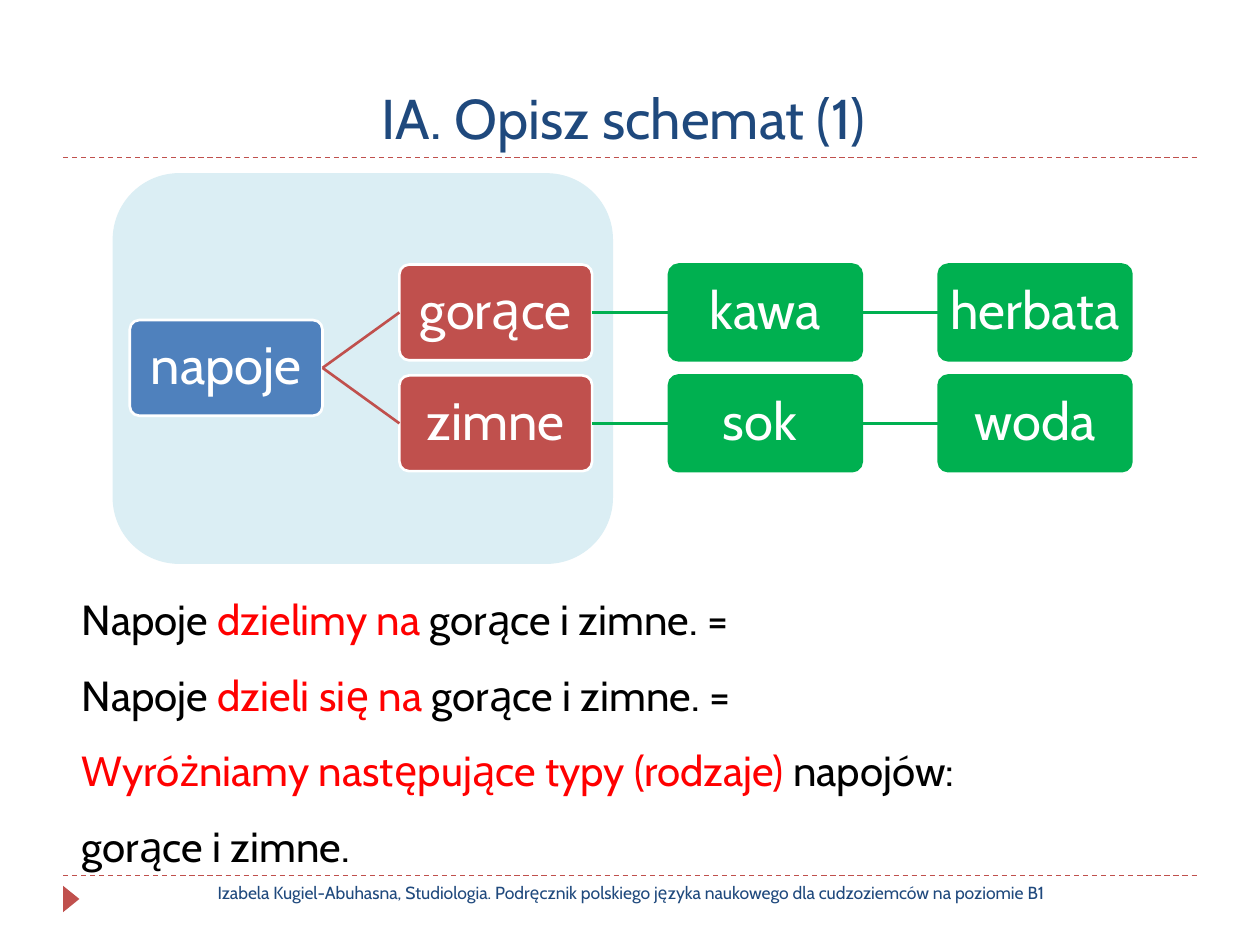
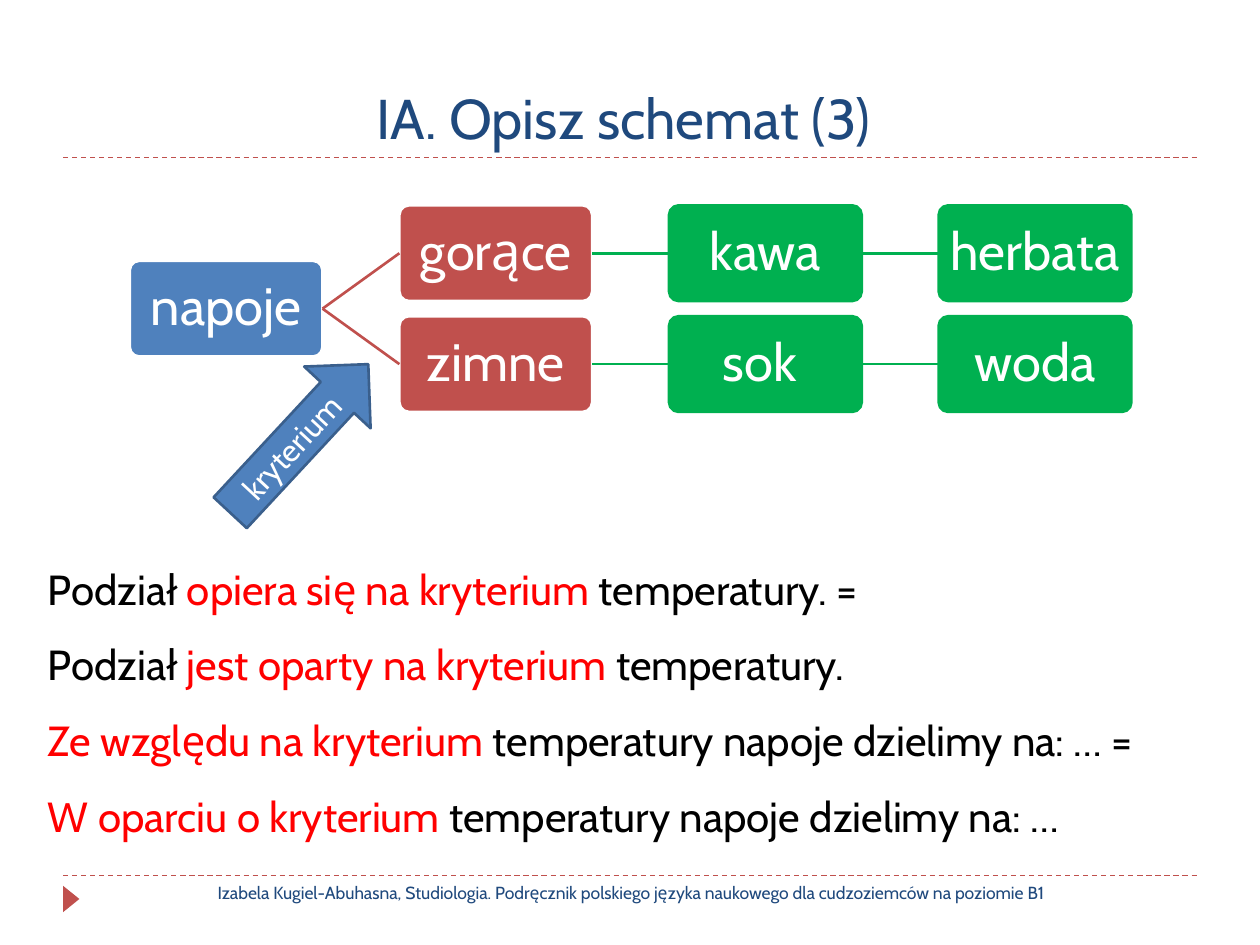
from dataclasses import dataclass
from typing import Any, NamedTuple

from lxml import etree
from pptx import Presentation
from pptx.dml.color import RGBColor as Rgb
from pptx.enum import dml, shapes, text
from pptx.oxml import ns
from pptx.util import Inches, Pt


@dataclass(frozen=True)
class Theme:
    font: str = "Cabin"
    navy: str = "1F497D"
    blue: str = "4F81BD"
    edge: str = "3A5F8C"
    brick: str = "C0504D"
    green: str = "00B050"
    pale: str = "DBEEF4"
    black: str = "000000"
    red: str = "FF0000"
    white: str = "FFFFFF"
    title: float = 32
    node: float = 30
    body: float = 24
    label: float = 18
    foot: float = 10


class Box(NamedTuple):
    left: float
    top: float
    width: float
    height: float


class Node(NamedTuple):
    name: str
    word: str
    col: int
    row: float
    fill: str
    edge: str


class Link(NamedTuple):
    start: str
    end: str
    color: str


class Part(NamedTuple):
    words: str
    color: str


class Page(NamedTuple):
    title: str
    root: float
    body: Box
    lines: list[list[Part]]


T = Theme()
SHAPE = shapes.MSO_SHAPE
MID = text.MSO_ANCHOR.MIDDLE
CENTER = text.PP_ALIGN.CENTER
FOOT = ("Izabela Kugiel-Abuhasna, Studiologia. Podręcznik polskiego języka "
        "naukowego dla cudzoziemców na poziomie B1")
WIDE, HIGH = 1.53, 0.76
LEFT, STEP, DROP = 1.03, 2.14, 0.44

NODES = [
    Node("root", "napoje", 0, 0, T.blue, T.white),
    Node("hot", "gorące", 1, -1, T.brick, T.white),
    Node("coffee", "kawa", 2, -1, T.green, T.green),
    Node("tea", "herbata", 3, -1, T.green, T.green),
    Node("cold", "zimne", 1, 1, T.brick, T.white),
    Node("juice", "sok ", 2, 1, T.green, T.green),
    Node("water", "woda", 3, 1, T.green, T.green),
]
LINKS = [
    Link("root", "hot", T.brick),
    Link("hot", "coffee", T.green),
    Link("coffee", "tea", T.green),
    Link("root", "cold", T.brick),
    Link("cold", "juice", T.green),
    Link("juice", "water", T.green),
]


def plain(words: str) -> Part:
    return Part(words, T.black)


def key(words: str) -> Part:
    return Part(words, T.red)


FIRST = Page("IA. Opisz schemat (1) ", 2.54, Box(0.55, 4.46, 8.9, 2.52), [
    [plain("Napoje "), key("dzielimy na "), plain("gorące i zimne. =")],
    [plain("Napoje "), key("dzieli się na "), plain("gorące i zimne. =")],
    [key("Wyróżniamy następujące typy (rodzaje) "),
     plain("napojów: \ngorące i zimne.")],
])
THIRD = Page("IA. Opisz schemat (3) ", 2.07, Box(0.28, 4.22, 9.44, 2.52), [
    [plain("Podział "), key("opiera się na kryterium "),
     plain("temperatury. =")],
    [plain("Podział "), key("jest oparty na kryterium "),
     plain("temperatury.")],
    [key("Ze względu na kryterium "),
     plain("temperatury napoje dzielimy na: … =")],
    [key("W oparciu o kryterium"),
     plain(" temperatury napoje dzielimy na: …")],
])


def put(item: Any, vals: dict[str, Any]) -> None:
    for name, val in vals.items():
        setattr(item, name, val)


def place(item: Any, box: Box) -> None:
    put(item, {name: Inches(val) for name, val in box._asdict().items()})


def write(para: Any, words: str, size: float, color: str) -> None:
    for num, piece in enumerate(words.split("\n")):
        if num:
            para.add_line_break()
            etree.SubElement(para._p[-1], ns.qn("a:rPr"), sz=str(int(size * 100)))
        run = para.add_run()
        run.text = piece
        put(run.font, {"name": T.font, "size": Pt(size)})
        run.font.color.rgb = Rgb.from_string(color)


def form(slide: Any, kind: Any, box: Box, fill: str,
         edge: str = "", width: float = 1.5) -> Any:
    item = slide.shapes.add_shape(kind, *map(Inches, box))
    item.shadow.inherit = False
    item.fill.solid()
    item.fill.fore_color.rgb = Rgb.from_string(fill)
    if edge:
        item.line.color.rgb = Rgb.from_string(edge)
        item.line.width = Pt(width)
    else:
        item.line.fill.background()
    return item


def rule(slide: Any, ends: tuple[float, ...], color: str, width: float) -> Any:
    line = slide.shapes.add_connector(shapes.MSO_CONNECTOR.STRAIGHT,
                                      *map(Inches, ends))
    line.line.color.rgb = Rgb.from_string(color)
    line.line.width = Pt(width)
    etree.SubElement(line._element.spPr, ns.qn("a:effectLst"))
    return line


def frame(slide: Any, title: str) -> None:
    for top in (6.95, 1.25):
        line = rule(slide, (0.5, top, 9.5, top), T.brick, 0.75)
        line.line.dash_style = dml.MSO_LINE.DASH
    mark = form(slide, SHAPE.ISOSCELES_TRIANGLE, Box(0.46, 7.07, 0.21, 0.13), T.brick)
    mark.rotation = 90
    head = slide.shapes.title
    place(head, Box(0.5, 0.17, 9, 1.08))
    head.text_frame.vertical_anchor = text.MSO_ANCHOR.BOTTOM
    foot = slide.shapes.add_textbox(*map(Inches, Box(0.83, 6.95, 8.35, 0.4)))
    foot.text_frame.word_wrap = True
    for item, words, size in ((head, title, T.title), (foot, FOOT, T.foot)):
        para = item.text_frame.paragraphs[0]
        para.alignment = CENTER
        write(para, words, size, T.navy)


def prose(slide: Any, page: Page) -> None:
    body = slide.placeholders[1]
    place(body, page.body)
    area = body.text_frame
    put(area, {"word_wrap": True, "auto_size": text.MSO_AUTO_SIZE.NONE,
               "vertical_anchor": text.MSO_ANCHOR.TOP})
    for num, line in enumerate(page.lines):
        para = area.add_paragraph() if num else area.paragraphs[0]
        put(para, {"line_spacing": 1.5, "space_before": Pt(0),
                   "space_after": Pt(0)})
        props = para._p.get_or_add_pPr()
        props.set("marL", "0")
        props.set("indent", "0")
        etree.SubElement(props, ns.qn("a:buNone"))
        for part in line:
            write(para, part.words, T.body, part.color)


def tree(slide: Any, root: float) -> None:
    made = {}
    for node in NODES:
        box = Box(LEFT + node.col * STEP, root + node.row * DROP, WIDE, HIGH)
        item = form(slide, SHAPE.ROUNDED_RECTANGLE, box, node.fill, node.edge)
        item.adjustments[0] = 0.1
        area = item.text_frame
        sides = ("left", "top", "right", "bottom")
        put(area, {f"margin_{side}": Inches(0.02) for side in sides})
        put(area, {"word_wrap": True, "vertical_anchor": MID})
        para = area.paragraphs[0]
        put(para, {"alignment": CENTER, "line_spacing": 0.9})
        write(para, node.word, T.node, T.white)
        made[node.name] = item
    for link in LINKS:
        line = rule(slide, (0, 0, 1, 1), link.color, 1.5)
        line.begin_connect(made[link.start], 3)
        line.end_connect(made[link.end], 1)


def arrow(slide: Any) -> None:
    item = form(slide, SHAPE.RIGHT_ARROW, Box(1.57, 3.12, 1.61, 0.72),
                T.blue, T.edge)
    item.rotation = 312.9
    item.text_frame.vertical_anchor = MID
    para = item.text_frame.paragraphs[0]
    para.alignment = CENTER
    write(para, "kryterium", T.label, T.white)


def start(deck: Any, page: Page) -> Any:
    slide = deck.slides.add_slide(deck.slide_layouts[1])
    frame(slide, page.title)
    prose(slide, page)
    return slide


def main() -> None:
    deck = Presentation()
    put(deck, {"slide_width": Inches(10), "slide_height": Inches(7.5)})
    slide = start(deck, FIRST)
    form(slide, SHAPE.ROUNDED_RECTANGLE, Box(0.91, 1.39, 3.94, 3.07),
         T.pale, T.pale, 2.25)
    tree(slide, FIRST.root)
    slide = start(deck, THIRD)
    tree(slide, THIRD.root)
    arrow(slide)
    deck.save("out.pptx")


if __name__ == "__main__":
    main()
